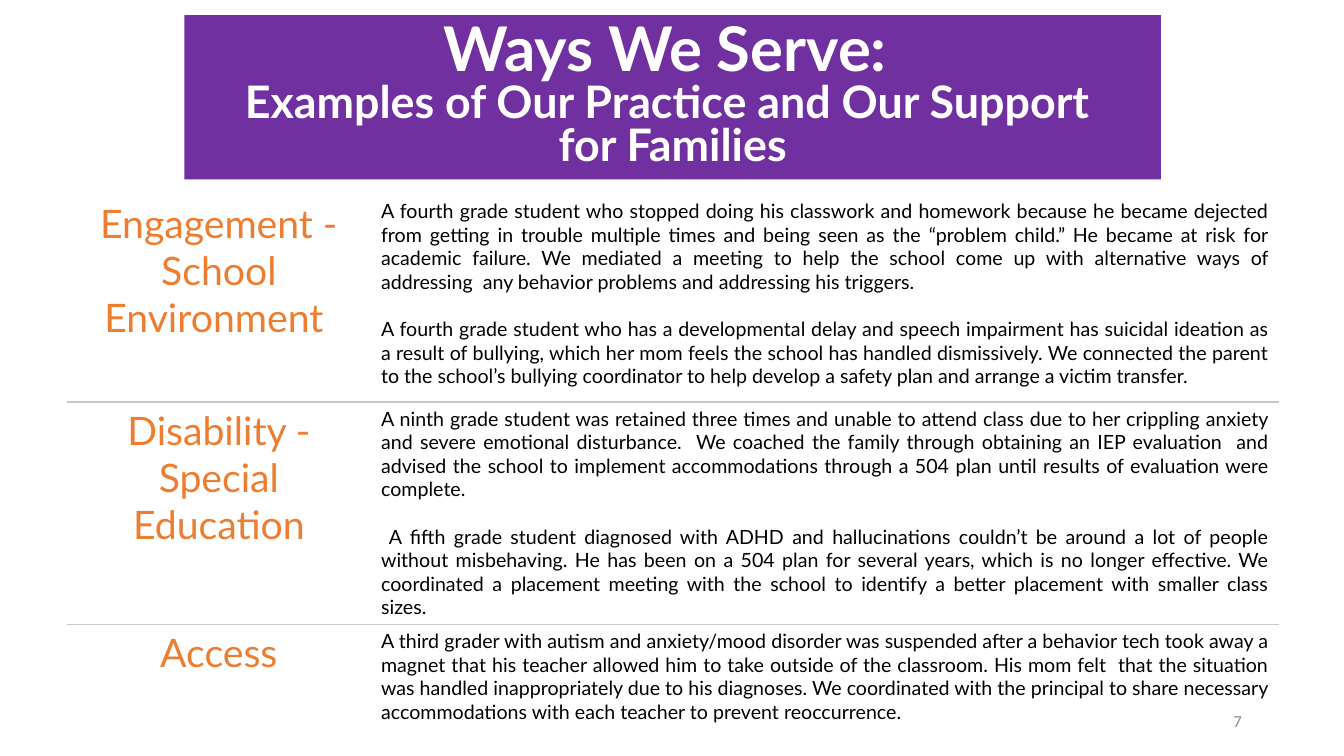
import pptx
import pptx.dml.color
import pptx.enum.shapes
import pptx.enum.text
import pptx.oxml
import pptx.oxml.ns
import pptx.util

Cm = pptx.util.Cm
Pt = pptx.util.Pt
ALIGN = pptx.enum.text.PP_ALIGN
MIDDLE = pptx.enum.text.MSO_ANCHOR.MIDDLE

PURPLE, ORANGE, GREY = "7030A0", "ED7D31", "8C8C8C"
WHITE, BLACK, RULE = "FFFFFF", "000000", "C9C9C9"
PLAIN_TABLE = "{2D5ABB26-0587-4C30-8999-92F81FD0307C}"

BANNER = [
    ("Ways We Serve: ", 44),
    ("Examples of Our Practice and Our Support ", 32),
    ("for Families", 32),
]

SERVICES = [
    ("Engagement - School Environment ", [
        "A fourth grade student who stopped doing his classwork and homework because he "
        "became dejected from getting in trouble multiple times and being seen as the "
        "“problem child.” He became at risk for academic failure. We mediated a meeting to "
        "help the school come up with alternative ways of addressing  any behavior problems "
        "and addressing his triggers.",
        "A fourth grade student who has a developmental delay and speech impairment has "
        "suicidal ideation as a result of bullying, which her mom feels the school has "
        "handled dismissively. We connected the parent to the school’s bullying coordinator "
        "to help develop a safety plan and arrange a victim transfer.",
    ]),
    ("Disability - Special Education", [
        "A ninth grade student was retained three times and unable to attend class due to "
        "her crippling anxiety and severe emotional disturbance.  We coached the family "
        "through obtaining an IEP evaluation  and advised the school to implement "
        "accommodations through a 504 plan until results of evaluation were complete.",
        " A fifth grade student diagnosed with ADHD and hallucinations couldn’t be around a "
        "lot of people without misbehaving. He has been on a 504 plan for several years, "
        "which is no longer effective. We coordinated a placement meeting with the school "
        "to identify a better placement with smaller class sizes.",
    ]),
    ("Access", [
        "A third grader with autism and anxiety/mood disorder was suspended after a behavior "
        "tech took away a magnet that his teacher allowed him to take outside of the "
        "classroom. His mom felt  that the situation was handled inappropriately due to his "
        "diagnoses. We coordinated with the principal to share necessary accommodations with "
        "each teacher to prevent reoccurrence. ",
    ]),
]


def color(value):
    return pptx.dml.color.RGBColor.from_string(value)


def write(frame, lines, align, ink, font="Lato", bold=False, spacing=None, gap=0):
    """Fill a text frame with one paragraph per (text, size) pair."""
    frame.word_wrap = True
    frame.text = "\n".join(text for text, size in lines)
    for index, (para, (text, size)) in enumerate(zip(frame.paragraphs, lines)):
        para.alignment = align
        if spacing:
            para.line_spacing = spacing
        if gap and index:
            para.space_before = Pt(gap)
        for span in para.runs:
            span.font.name = font
            span.font.size = Pt(size)
            span.font.bold = bold
            span.font.color.rgb = color(ink)


def add_banner(page):
    box = page.shapes.add_shape(pptx.enum.shapes.MSO_SHAPE.RECTANGLE,
                                Cm(4.65), Cm(0.38), Cm(24.61), Cm(4.14))
    box.shadow.inherit = False
    box.fill.solid()
    box.fill.fore_color.rgb = color(PURPLE)
    box.line.fill.background()
    box.text_frame.vertical_anchor = MIDDLE
    write(box.text_frame, BANNER, ALIGN.CENTER, WHITE, bold=True, spacing=0.8)


def add_page_number(page):
    box = page.shapes.add_textbox(Cm(23.93), Cm(17.65), Cm(7.62), Cm(1.02))
    box.text_frame.vertical_anchor = MIDDLE
    write(box.text_frame, [("7", 12)], ALIGN.RIGHT, GREY, font="Calibri")


def rule_cell(cell, edges):
    """Draw thin rules on the given edges, listed in schema order."""
    properties = cell._tc.get_or_add_tcPr()
    for position, edge in enumerate(edges):
        line = pptx.oxml.parse_xml(
            f'<a:{edge} {pptx.oxml.ns.nsdecls("a")} w="12700"><a:solidFill>'
            f'<a:srgbClr val="{RULE}"/></a:solidFill></a:{edge}>')
        properties.insert(position, line)


def add_services(page):
    table = page.shapes.add_table(len(SERVICES), 2, Cm(1.68), Cm(4.9),
                                  Cm(30.56), Cm(13.89)).table
    table.first_row = table.horz_banding = False
    table._tbl.tblPr.find(pptx.oxml.ns.qn("a:tableStyleId")).text = PLAIN_TABLE
    for column, width in zip(table.columns, (7.67, 22.89)):
        column.width = Cm(width)
    for row, height in zip(table.rows, (5.23, 4.85, 3.81)):
        row.height = Cm(height)

    last = len(SERVICES) - 1
    for index, (label, stories) in enumerate(SERVICES):
        name_cell, story_cell = table.rows[index].cells
        write(name_cell.text_frame, [(label, 28)], ALIGN.CENTER, ORANGE)
        write(story_cell.text_frame, [(story, 14) for story in stories],
              ALIGN.JUSTIFY, BLACK, gap=17)
        edges = ["lnT"] * (index > 0) + ["lnB"] * (index < last)
        for cell in (name_cell, story_cell):
            cell.fill.background()
            rule_cell(cell, edges)


def main():
    deck = pptx.Presentation()
    deck.slide_width, deck.slide_height = Cm(33.87), Cm(19.05)
    page = deck.slides.add_slide(deck.slide_layouts[6])
    add_page_number(page)
    add_banner(page)
    add_services(page)
    deck.save("out.pptx")


if __name__ == "__main__":
    main()
